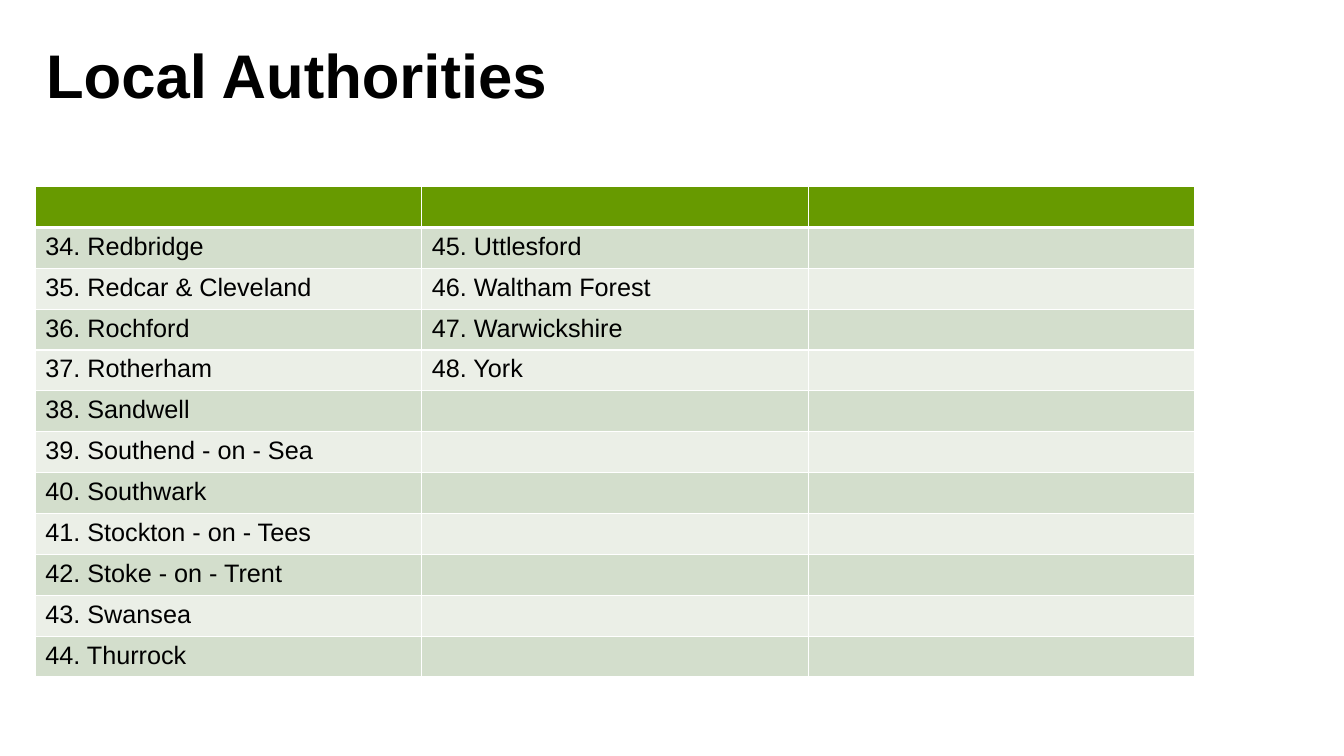
from dataclasses import dataclass

from lxml import etree
from pptx import Presentation
from pptx import util as u
from pptx.dml.color import RGBColor
from pptx.enum import text
from pptx.oxml import ns

PX = 9144
WIDTH, HEIGHT = 1333, 750
AUTHORITIES = [
    ("34. Redbridge", "45. Uttlesford"),
    ("35. Redcar & Cleveland", "46. Waltham Forest"),
    ("36. Rochford", "47. Warwickshire"),
    ("37. Rotherham", "48. York"),
    ("38. Sandwell",),
    ("39. Southend - on - Sea",),
    ("40. Southwark",),
    ("41. Stockton - on - Tees",),
    ("42. Stoke - on - Trent",),
    ("43. Swansea",),
    ("44. Thurrock",),
]


@dataclass(frozen=True)
class Theme:
    font: str = "Arial"
    ink: str = "000000"
    header: str = "679A00"
    bands: tuple = ("D3DECC", "EBEFE7")
    border: str = "FFFFFF"
    title_size: int = 44
    body_size: int = 18
    thin: int = 1
    thick: int = 3


class SlideBuilder:
    """Draws themed elements on one slide, with lengths in px."""

    def __init__(self, slide, theme):
        self.slide = slide
        self.theme = theme

    def format_text(self, paragraph, size, bold=False):
        for run in paragraph.runs:
            run.font.name = self.theme.font
            run.font.size = u.Pt(size)
            run.font.bold = bold
            run.font.color.rgb = RGBColor.from_string(self.theme.ink)

    def title(self, box, content):
        shape = self.slide.shapes.add_textbox(*(length * PX for length in box))
        frame = shape.text_frame
        frame.word_wrap = True
        frame.vertical_anchor = text.MSO_ANCHOR.TOP
        frame.text = content
        paragraph = frame.paragraphs[0]
        paragraph.line_spacing = 0.9
        self.format_text(paragraph, self.theme.title_size, bold=True)

    def border(self, cell, side, points):
        properties = cell._tc.get_or_add_tcPr()
        line = etree.SubElement(properties, ns.qn(f"a:ln{side}"), w=str(u.Pt(points)))
        fill = etree.SubElement(line, ns.qn("a:solidFill"))
        etree.SubElement(fill, ns.qn("a:srgbClr"), val=self.theme.border)

    def cell(self, cell, content, row):
        theme = self.theme
        below_header = {(0, "B"), (1, "T")}
        for side in "LRTB":
            thick = (row, side) in below_header
            self.border(cell, side, theme.thick if thick else theme.thin)
        color = theme.bands[(row - 1) % 2] if row else theme.header
        cell.fill.solid()
        cell.fill.fore_color.rgb = RGBColor.from_string(color)
        cell.text_frame.text = content
        self.format_text(cell.text_frame.paragraphs[0], theme.body_size)

    def table(self, box, rows, columns):
        lengths = (length * PX for length in box)
        table = self.slide.shapes.add_table(len(rows), columns, *lengths).table
        for row, values in enumerate(rows):
            for column in range(columns):
                content = values[column] if column < len(values) else ""
                self.cell(table.cell(row, column), content, row)


def main():
    presentation = Presentation()
    presentation.slide_width = WIDTH * PX
    presentation.slide_height = HEIGHT * PX
    slide = presentation.slides.add_slide(presentation.slide_layouts[6])
    builder = SlideBuilder(slide, Theme())
    builder.title((36, 40, 1150, 145), "Local Authorities")
    builder.table((35, 185, 1150, 487), [()] + AUTHORITIES, 3)
    presentation.save("out.pptx")


if __name__ == "__main__":
    main()
